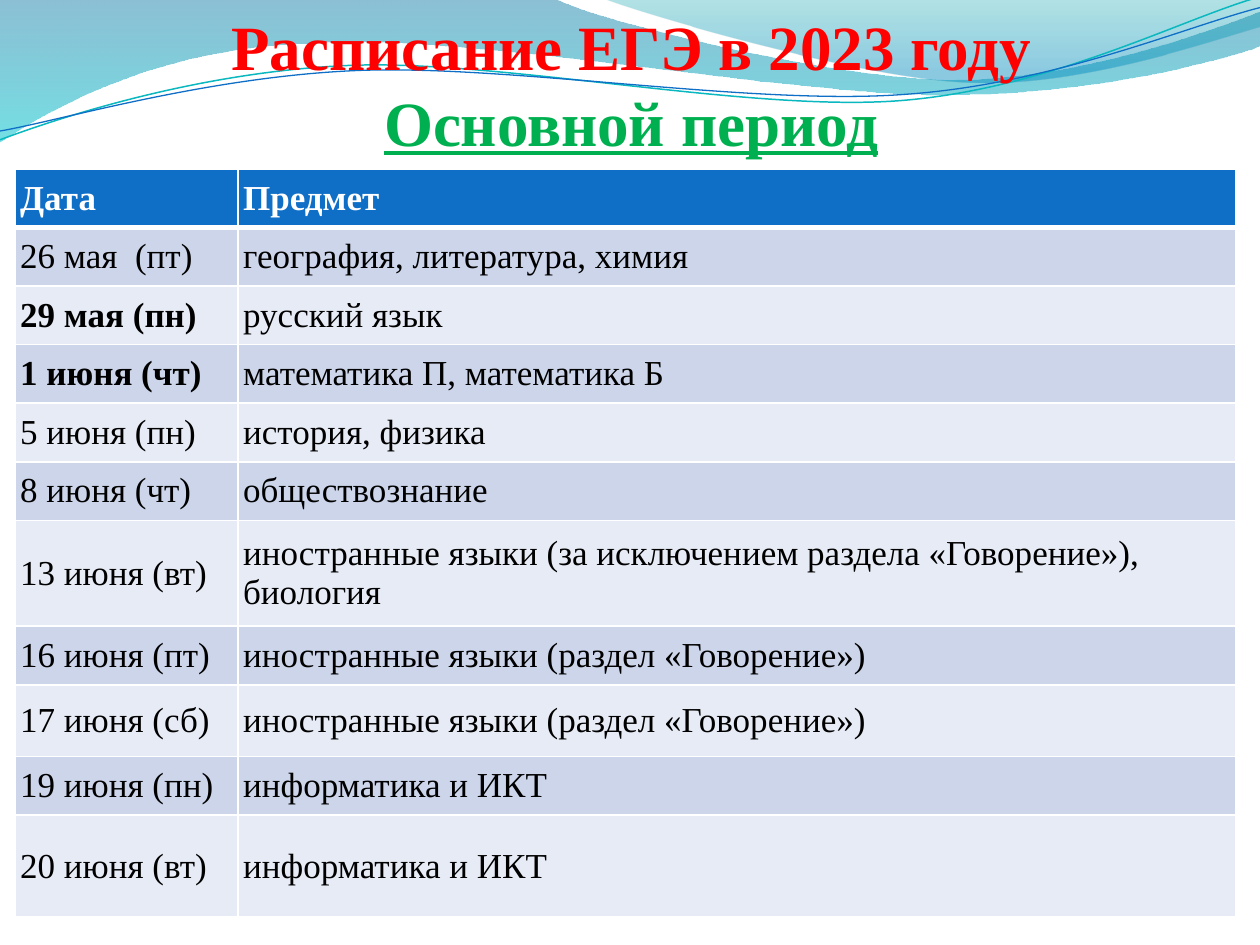
"""Builds a slide with the exam timetable under a wave-shaped banner."""
import math
from dataclasses import dataclass

import lxml.etree
import pptx
import pptx.dml.color
import pptx.enum.text
import pptx.oxml.ns
import pptx.shapes.autoshape
import pptx.slide
import pptx.table
import pptx.util

RGBColor = pptx.dml.color.RGBColor
Point = tuple[int, int]

EMU_PER_PX = 914.4
FONT = "Times New Roman"
WHITE = RGBColor(0xFF, 0xFF, 0xFF)
BLACK = RGBColor(0x00, 0x00, 0x00)
RED = RGBColor(0xFF, 0x00, 0x00)
GREEN = RGBColor(0x00, 0xB0, 0x50)
BLUE = RGBColor(0x0F, 0x6F, 0xC6)
TEAL = RGBColor(0x0A, 0xB8, 0xBF)
ROW_FILLS = (RGBColor(0xCC, 0xD5, 0xEA), RGBColor(0xE7, 0xEB, 0xF5))


@dataclass(frozen=True)
class Outline:
    box: tuple[int, int, int, int]
    start: Point
    segments: list[tuple[Point, ...]]
    rotation: float = 0


@dataclass(frozen=True)
class GradientStop:
    position: float
    color: RGBColor
    opacity: int


@dataclass(frozen=True)
class Wave:
    outline: Outline
    stops: tuple[GradientStop, GradientStop]


@dataclass(frozen=True)
class Ribbon:
    outline: Outline
    color: RGBColor
    width: float


@dataclass(frozen=True)
class ExamDay:
    date: str
    subjects: str
    height: int = 465
    bold_date: bool = False


WAVES = [
    Wave(
        Outline((-10, -10, 10020, 1140), (0, 0), [
            ((4400, -10),),
            ((4760, 170), (6640, 630), (7580, 630)),
            ((8530, 630), (9580, 260), (10000, 90)),
            ((10010, 360),),
            ((9830, 440), (8700, 760), (7460, 750)),
            ((6220, 750), (3820, 280), (2570, 340)),
            ((1290, 360), (460, 830), (-10, 1130)),
            ((0, 0),),
        ]),
        (GradientStop(0, RGBColor(0x00, 0x74, 0xA1), 45),
         GradientStop(1, RGBColor(0x00, 0xC6, 0xCF), 55)),
    ),
    Wave(
        Outline((4790, -10, 5210, 700), (4790, -10), [
            ((5090, 110), (6820, 620), (7690, 650)),
            ((8560, 690), (9610, 320), (10000, 210)),
            ((10000, 0),),
            ((4790, -10),),
        ]),
        (GradientStop(0, RGBColor(0x00, 0xA1, 0xA9), 30),
         GradientStop(0.8, RGBColor(0x00, 0x8B, 0xBF), 45)),
    ),
]

RIBBONS = [
    Ribbon(
        Outline((-20, 220, 10020, 710), (0, 1110), [
            ((480, 930), (1580, 570), (2770, 520)),
            ((3950, 470), (5930, 890), (7130, 800)),
            ((8330, 710), (9380, 150), (9980, -20)),
        ], -2.7),
        TEAL, 0.85,
    ),
    Ribbon(
        Outline((-20, 300, 10030, 580), (0, 1040), [
            ((470, 960), (1640, 610), (2830, 560)),
            ((4030, 510), (5970, 840), (7170, 750)),
            ((8360, 670), (9410, 210), (10000, 60)),
        ], -2.7),
        BLUE, 0.75,
    ),
]

EXAM_DAYS = [
    ExamDay("26 мая  (пт)", "география, литература, химия"),
    ExamDay("29 мая (пн)", "русский язык", bold_date=True),
    ExamDay("1 июня (чт)", "математика П, математика Б", bold_date=True),
    ExamDay("5 июня (пн)", "история, физика"),
    ExamDay("8 июня (чт)", "обществознание"),
    ExamDay("13 июня (вт)", "иностранные языки (за исключением раздела «Говорение»), биология", 840),
    ExamDay("16 июня (пт)", "иностранные языки (раздел «Говорение»)"),
    ExamDay("17 июня (сб)", "иностранные языки (раздел «Говорение»)", 570),
    ExamDay("19 июня (пн)", "информатика и ИКТ"),
    ExamDay("20 июня (вт)", "информатика и ИКТ", 810),
]


def px(value: float) -> pptx.util.Emu:
    return pptx.util.Emu(round(value * EMU_PER_PX))


def local_point(outline: Outline, point: Point) -> tuple[int, int]:
    left, top, width, height = outline.box
    dx, dy = point[0] - left - width / 2, point[1] - top - height / 2
    angle = math.radians(-outline.rotation)
    x = dx * math.cos(angle) - dy * math.sin(angle) + width / 2
    y = dx * math.sin(angle) + dy * math.cos(angle) + height / 2
    return px(x), px(y)


def draw_outline(slide: pptx.slide.Slide, outline: Outline, close: bool) -> pptx.shapes.autoshape.Shape:
    builder = slide.shapes.build_freeform(*local_point(outline, outline.start), scale=1.0)
    builder.add_line_segments([local_point(outline, segment[-1]) for segment in outline.segments], close=close)
    shape = builder.convert_to_shape()
    shape.left, shape.top, shape.width, shape.height = map(px, outline.box)
    shape.rotation = outline.rotation
    shape.shadow.inherit = False
    path = next(shape.element.spPr.iter(pptx.oxml.ns.qn("a:path")))
    path.set("w", str(shape.width))
    path.set("h", str(shape.height))
    for command, segment in zip(list(path), [(outline.start,), *outline.segments]):
        if len(segment) == 3:
            curve = lxml.etree.Element(pptx.oxml.ns.qn("a:cubicBezTo"))
            path.replace(command, curve)
            command = curve
        for child in list(command):
            command.remove(child)
        for point in segment:
            x, y = local_point(outline, point)
            lxml.etree.SubElement(command, pptx.oxml.ns.qn("a:pt"), x=str(x), y=str(y))
    return shape


def draw_wave(slide: pptx.slide.Slide, wave: Wave) -> None:
    shape = draw_outline(slide, wave.outline, True)
    shape.line.fill.background()
    shape.fill.gradient()
    shape.fill.gradient_angle = 270
    for target, stop in zip(shape.fill.gradient_stops, wave.stops):
        target.position = stop.position
        target.color.rgb = stop.color
    colors = shape.element.spPr.iter(pptx.oxml.ns.qn("a:srgbClr"))
    for color, stop in zip(list(colors), wave.stops):
        lxml.etree.SubElement(color, pptx.oxml.ns.qn("a:alpha"), val=str(stop.opacity * 1000))


def draw_ribbon(slide: pptx.slide.Slide, ribbon: Ribbon) -> None:
    shape = draw_outline(slide, ribbon.outline, False)
    shape.fill.background()
    shape.line.color.rgb = ribbon.color
    shape.line.width = pptx.util.Pt(ribbon.width)


def draw_title(slide: pptx.slide.Slide) -> None:
    frame = slide.shapes.add_textbox(px(510), px(10), px(9000), px(1250)).text_frame
    frame.word_wrap = True
    frame.vertical_anchor = pptx.enum.text.MSO_ANCHOR.BOTTOM
    frame.margin_left = frame.margin_right = frame.margin_bottom = 0
    paragraph = frame.paragraphs[0]
    paragraph.alignment = pptx.enum.text.PP_ALIGN.CENTER
    paragraph.font.name, paragraph.font.size, paragraph.font.bold = FONT, pptx.util.Pt(36), True
    heading = paragraph.add_run()
    heading.text, heading.font.color.rgb = "Расписание ЕГЭ в 2023 году", RED
    paragraph.add_line_break()
    period = paragraph.add_run()
    period.text, period.font.color.rgb, period.font.underline = "Основной период", GREEN, True


def set_border(cell: pptx.table._Cell, side: str, points: int) -> None:
    properties = cell._tc.get_or_add_tcPr()
    line = lxml.etree.SubElement(properties, pptx.oxml.ns.qn(f"a:ln{side}"), w=str(pptx.util.Pt(points)))
    fill = lxml.etree.SubElement(line, pptx.oxml.ns.qn("a:solidFill"))
    lxml.etree.SubElement(fill, pptx.oxml.ns.qn("a:srgbClr"), val=str(WHITE))


def fill_cell(cell: pptx.table._Cell, text: str, row: int, bold: bool) -> None:
    cell.margin_left = cell.margin_right = cell.margin_top = cell.margin_bottom = px(40)
    cell.vertical_anchor = pptx.enum.text.MSO_ANCHOR.MIDDLE
    for side in "LRTB":
        set_border(cell, side, 3 if (row, side) in ((0, "B"), (1, "T")) else 1)
    cell.fill.solid()
    cell.fill.fore_color.rgb = ROW_FILLS[(row - 1) % 2] if row else BLUE
    cell.text = text
    font = cell.text_frame.paragraphs[0].font
    font.name, font.size, font.bold = FONT, pptx.util.Pt(20), bold
    font.color.rgb = BLACK if row else WHITE


def draw_timetable(slide: pptx.slide.Slide) -> None:
    rows = [ExamDay("Дата", "Предмет", bold_date=True), *EXAM_DAYS]
    height = sum(day.height for day in rows)
    table = slide.shapes.add_table(len(rows), 2, px(120), px(1340), px(9690), px(height)).table
    for column, width in zip(table.columns, (1770, 7920)):
        column.width = px(width)
    for index, day in enumerate(rows):
        table.rows[index].height = px(day.height)
        fill_cell(table.cell(index, 0), day.date, index, day.bold_date)
        fill_cell(table.cell(index, 1), day.subjects, index, index == 0)


presentation = pptx.Presentation()
presentation.slide_width, presentation.slide_height = px(10000), px(7500)
main_slide = presentation.slides.add_slide(presentation.slide_layouts[6])
for banner_wave in WAVES:
    draw_wave(main_slide, banner_wave)
for banner_ribbon in RIBBONS:
    draw_ribbon(main_slide, banner_ribbon)
draw_title(main_slide)
draw_timetable(main_slide)
presentation.save("out.pptx")
